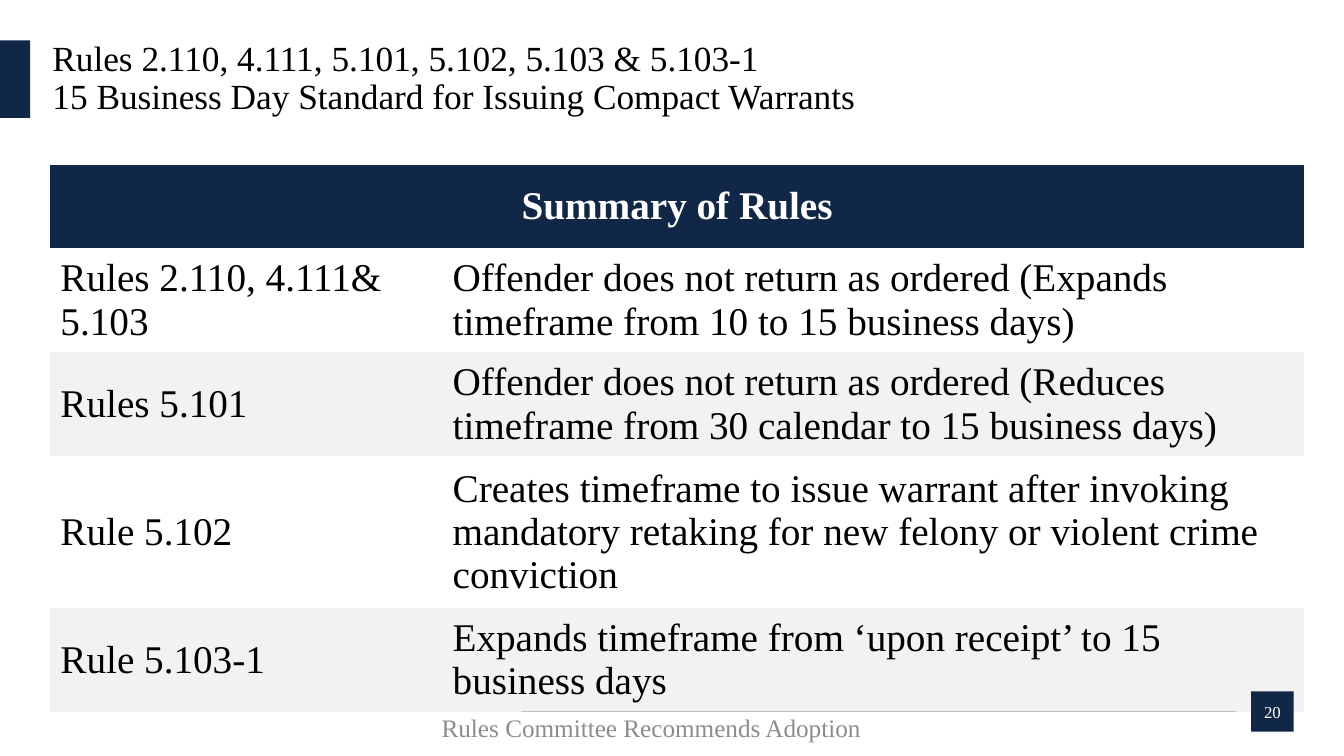
from lxml import etree
from pptx import Presentation
from pptx.dml.color import RGBColor
from pptx.enum.shapes import MSO_CONNECTOR, MSO_SHAPE
from pptx.enum.text import MSO_ANCHOR, PP_ALIGN
from pptx.oxml.ns import qn
from pptx.util import Inches, Pt

NAVY = RGBColor(0x10, 0x27, 0x47)
BLACK = RGBColor(0, 0, 0)
WHITE = RGBColor(0xFF, 0xFF, 0xFF)
BAND = RGBColor(0xF2, 0xF2, 0xF2)
RULE_GRAY = RGBColor(0xBF, 0xBF, 0xBF)
FOOTER_GRAY = RGBColor(0x8C, 0x8C, 0x8C)
FONT = "Times New Roman"

TITLE_LINES = [
    "Rules 2.110, 4.111, 5.101, 5.102, 5.103 & 5.103-1",
    "15 Business Day Standard for Issuing Compact Warrants",
]
SUMMARY = [
    ("Rules 2.110, 4.111& 5.103",
     "Offender does not return as ordered (Expands timeframe from 10 to 15 business days)"),
    ("Rules 5.101",
     "Offender does not return as ordered (Reduces timeframe from 30 calendar to 15 business days)"),
    ("Rule 5.102",
     "Creates timeframe to issue warrant after invoking mandatory retaking "
     "for new felony or violent crime conviction"),
    ("Rule 5.103-1",
     "Expands timeframe from ‘upon receipt’ to 15 business days"),
]
COLUMN_WIDTHS = [3.89, 8.54]
ROW_HEIGHTS = [0.82, 0.99, 0.99, 1.43, 0.99]


def add_run(paragraph, text, size, color, bold=False):
    run = paragraph.add_run()
    run.text = text
    run.font.name = FONT
    run.font.size = Pt(size)
    run.font.bold = bold
    run.font.color.rgb = color


def add_navy_box(slide, left, top, width, height):
    shape = slide.shapes.add_shape(
        MSO_SHAPE.RECTANGLE, Inches(left), Inches(top), Inches(width), Inches(height))
    shape.shadow.inherit = False
    shape.fill.solid()
    shape.fill.fore_color.rgb = NAVY
    shape.line.fill.background()
    return shape


def prepare_frame(shape):
    """Wrap and centre the text vertically, without insets."""
    frame = shape.text_frame
    frame.word_wrap = True
    frame.vertical_anchor = MSO_ANCHOR.MIDDLE
    frame.margin_left = frame.margin_right = frame.margin_top = frame.margin_bottom = 0
    return frame.paragraphs[0]


def add_text_box(slide, left, top, width, height):
    return prepare_frame(slide.shapes.add_textbox(
        Inches(left), Inches(top), Inches(width), Inches(height)))


def add_title(slide, left, top, width, height):
    add_navy_box(slide, left, top, 0.3, height)
    paragraph = add_text_box(slide, left + 0.52, top, width - 0.52, height)
    paragraph.line_spacing = 0.9
    for index, line in enumerate(TITLE_LINES):
        if index:
            paragraph.add_line_break()
        add_run(paragraph, line, 25.2, BLACK)


def fill_cell(cell, text, fill, color, bold=False):
    cell.fill.solid()
    cell.fill.fore_color.rgb = fill
    cell.vertical_anchor = MSO_ANCHOR.MIDDLE
    paragraph = cell.text_frame.paragraphs[0]
    add_run(paragraph, text, 28, color, bold)
    return paragraph


def clear_borders(cell):
    properties = cell._tc.get_or_add_tcPr()
    for index, side in enumerate(("lnL", "lnR", "lnT", "lnB")):
        border = etree.Element(qn(f"a:{side}"), w="0")
        etree.SubElement(border, qn("a:noFill"))
        properties.insert(index, border)


def add_summary_table(slide, left, top):
    table = slide.shapes.add_table(
        len(ROW_HEIGHTS), len(COLUMN_WIDTHS), Inches(left), Inches(top),
        Inches(sum(COLUMN_WIDTHS)), Inches(sum(ROW_HEIGHTS))).table
    for column, width in zip(table.columns, COLUMN_WIDTHS):
        column.width = Inches(width)
    for row, height in zip(table.rows, ROW_HEIGHTS):
        row.height = Inches(height)

    header = table.cell(0, 0)
    header.merge(table.cell(0, 1))
    fill_cell(header, "Summary of Rules", NAVY, WHITE, bold=True).alignment = PP_ALIGN.CENTER
    for row_index, texts in enumerate(SUMMARY, start=1):
        fill = WHITE if row_index % 2 else BAND
        for column_index, text in enumerate(texts):
            fill_cell(table.cell(row_index, column_index), text, fill, BLACK)
    for cell in table.iter_cells():
        clear_borders(cell)


def add_footer(slide, left, top, width, height):
    """Place the rule, the footer text and the page number in the given band."""
    right = left + width
    rule_top = top + 0.2
    rule = slide.shapes.add_connector(
        MSO_CONNECTOR.STRAIGHT, Inches(left + 0.96), Inches(rule_top),
        Inches(right - 0.57), Inches(rule_top))
    rule.line.color.rgb = RULE_GRAY
    rule.line.width = Pt(0.5)
    etree.SubElement(rule._element.spPr, qn("a:effectLst"))

    note = add_text_box(slide, left, top + 0.16, 4.5, height)
    note.alignment = PP_ALIGN.CENTER
    note.space_after = Pt(6)
    add_run(note, "Rules Committee Recommends Adoption", 18, FOOTER_GRAY)

    number = prepare_frame(add_navy_box(slide, right - 0.42, top, 0.42, height))
    number.alignment = PP_ALIGN.CENTER
    add_run(number, "20", 12, WHITE)


def main():
    presentation = Presentation()
    presentation.slide_width = Inches(13.33)
    presentation.slide_height = Inches(7.5)
    slide = presentation.slides.add_slide(presentation.slide_layouts[6])
    add_title(slide, 0, 0.4, 12.83, 0.77)
    add_summary_table(slide, 0.5, 1.64)
    add_footer(slide, 4.21, 6.86, 8.62, 0.4)
    presentation.save("out.pptx")


if __name__ == "__main__":
    main()
